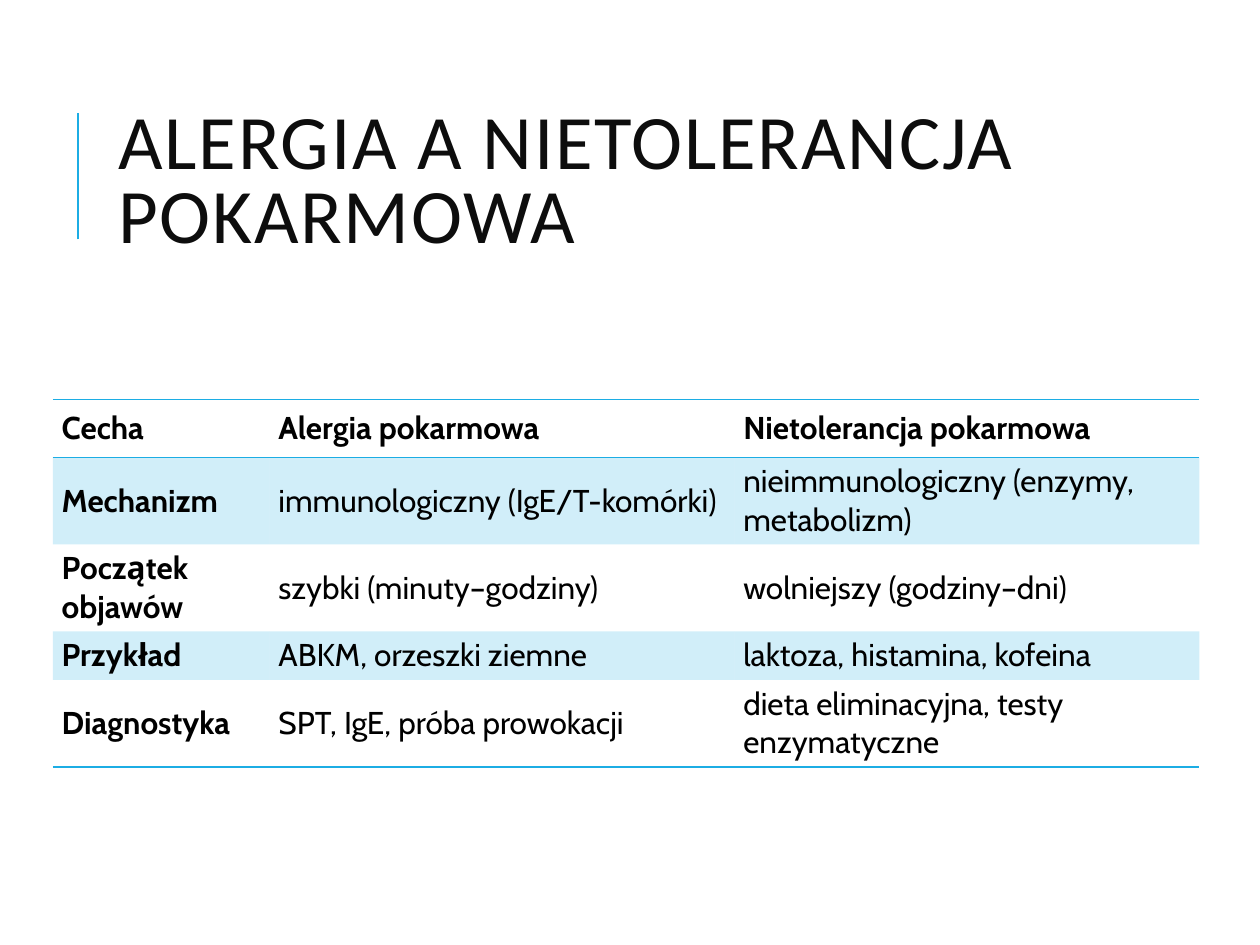
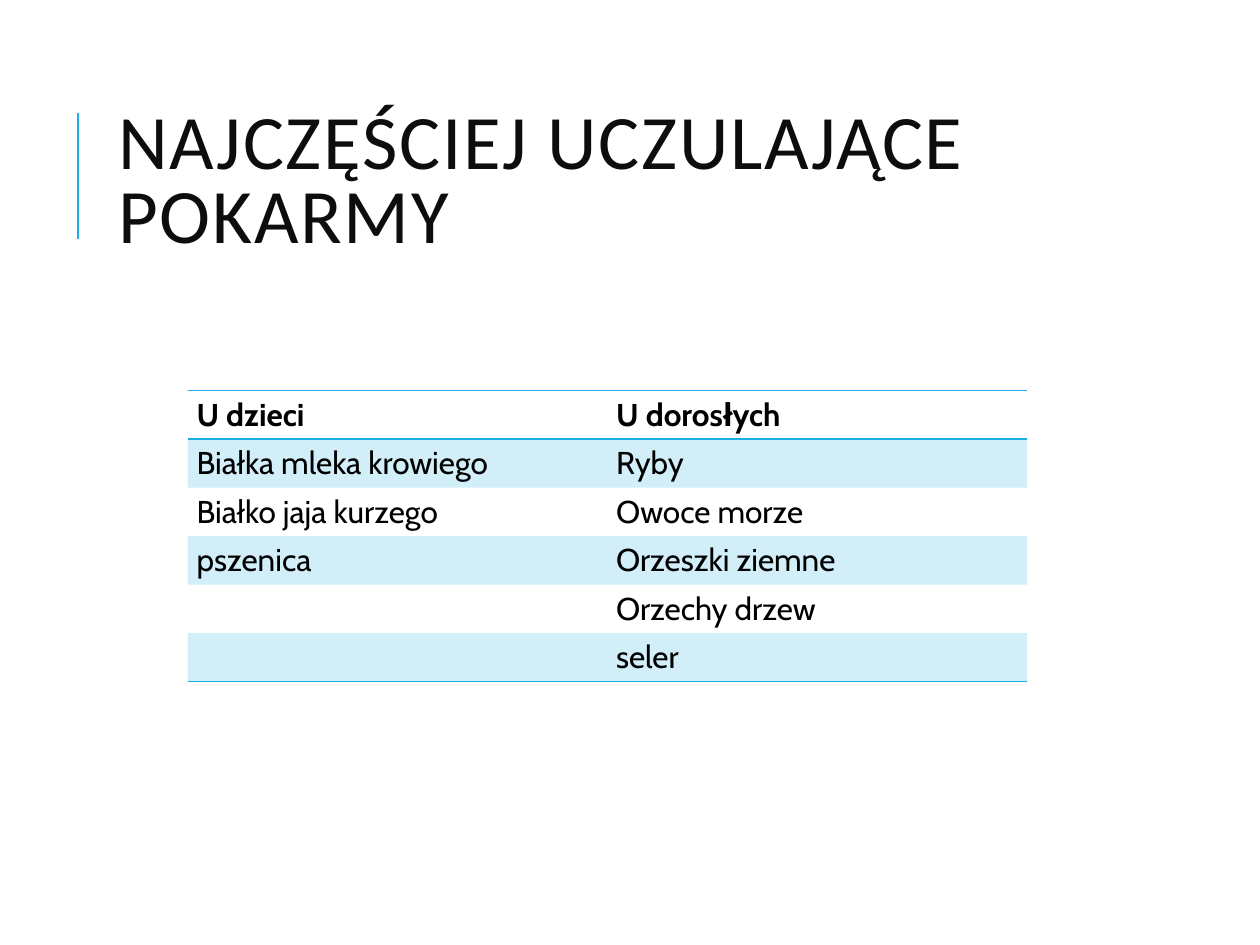
import pptx
import pptx.dml.color
import pptx.enum.shapes
import pptx.enum.text
import pptx.oxml
import pptx.oxml.ns
import pptx.util

PLAIN_TABLE_STYLE = "{2D5ABB26-0587-4C30-8999-92F81FD0307C}"
GRID_COLUMNS, GRID_ROWS = 100, 75


def colour(hex_string):
    return pptx.dml.color.RGBColor.from_string(hex_string)


def add_xml(parent, xml):
    namespace = pptx.oxml.ns.nsdecls("a")
    tag, rest = xml.split(" ", 1)
    parent.append(pptx.oxml.parse_xml(f"{tag} {namespace} {rest}"))


class Deck:
    accent = "1CADE4"
    title_colour = "0D0D0D"
    text_colour = "000000"
    title_font = "Calibri"
    table_font = "Cabin"
    band_opacity = 20

    def __init__(self):
        self.presentation = pptx.Presentation()
        self.presentation.slide_width = pptx.util.Inches(10)
        self.presentation.slide_height = pptx.util.Inches(7.5)
        self.slide = None

    def x(self, columns):
        return round(self.presentation.slide_width * columns / GRID_COLUMNS)

    def y(self, rows):
        return round(self.presentation.slide_height * rows / GRID_ROWS)

    def new_slide(self, title):
        layout = self.presentation.slide_layouts.get_by_name("Title Only")
        self.slide = self.presentation.slides.add_slide(layout)
        self.title_rule()
        self.title(title)

    def title_rule(self):
        rule = self.slide.shapes.add_connector(
            pptx.enum.shapes.MSO_CONNECTOR.STRAIGHT,
            self.x(6.2), self.y(19), self.x(6.2), self.y(9))
        rule.line.color.rgb = colour(self.accent)
        rule.line.width = pptx.util.Pt(1.5)
        add_xml(rule._element.spPr, "<a:effectLst />")

    def title(self, text):
        shape = self.slide.shapes.title
        shape.left, shape.top = self.x(8.4), self.y(6.4)
        shape.width, shape.height = self.x(79.7), self.y(16.4)
        frame = shape.text_frame
        frame.text = text
        frame.word_wrap = True
        frame.auto_size = pptx.enum.text.MSO_AUTO_SIZE.NONE
        frame.vertical_anchor = pptx.enum.text.MSO_ANCHOR.MIDDLE
        paragraph = frame.paragraphs[0]
        paragraph.alignment = pptx.enum.text.PP_ALIGN.LEFT
        paragraph.line_spacing = 0.8
        self.format_font(paragraph.font, self.title_font, 44, self.title_colour)
        paragraph.runs[0].font._element.set("spc", "100")

    def format_font(self, font, name, size, hex_string, bold=False):
        font.name = name
        font.size = pptx.util.Pt(size)
        font.bold = bold
        font.color.rgb = colour(hex_string)

    def table(self, left, top, widths, heights, rows, anchor, bold_first_column=False):
        frame = self.slide.shapes.add_table(
            len(rows), len(widths), self.x(left), self.y(top),
            self.x(sum(widths)), self.y(sum(heights)))
        table = frame.table
        properties = table._tbl.tblPr
        properties.find(pptx.oxml.ns.qn("a:tableStyleId")).text = PLAIN_TABLE_STYLE
        for column, width in zip(table.columns, widths):
            column.width = self.x(width)
        for row, height in zip(table.rows, heights):
            row.height = self.y(height)
        for i, texts in enumerate(rows):
            edges = {0: ("lnT", "lnB"), len(rows) - 1: ("lnB",)}.get(i, ())
            for j, text in enumerate(texts):
                bold = i == 0 or (bold_first_column and j == 0)
                self.cell(table.cell(i, j), text, bold, i % 2 == 1, edges, anchor)

    def cell(self, cell, text, bold, banded, edges, anchor):
        cell.text = text
        cell.vertical_anchor = anchor
        cell.margin_left = cell.margin_right = pptx.util.Inches(0.07)
        cell.margin_top = cell.margin_bottom = pptx.util.Inches(0.04)
        font = cell.text_frame.paragraphs[0].font
        self.format_font(font, self.table_font, 18, self.text_colour, bold)
        properties = cell._tc.get_or_add_tcPr()
        for edge in edges:
            add_xml(properties,
                    f'<a:{edge} w="{pptx.util.Pt(1)}"><a:solidFill>'
                    f'<a:srgbClr val="{self.accent}"/></a:solidFill></a:{edge}>')
        if banded:
            cell.fill.solid()
            cell.fill.fore_color.rgb = colour(self.accent)
            band = properties.find(".//" + pptx.oxml.ns.qn("a:solidFill")
                                   if not edges else pptx.oxml.ns.qn("a:solidFill"))
            add_xml(band[0], f'<a:alpha val="{self.band_opacity * 1000}"/>')
        else:
            cell.fill.background()


def main():
    deck = Deck()

    deck.new_slide("ALERGIA A NIETOLERANCJA POKARMOWA")
    one_line, two_lines = 3.8, 6.85
    deck.table(
        4.2, 31.7, [17.2, 36.9, 36.9],
        [4.6, two_lines, two_lines, one_line, two_lines],
        [
            ("Cecha", "Alergia pokarmowa", "Nietolerancja pokarmowa"),
            ("Mechanizm", "immunologiczny (IgE/T-komórki)",
             "nieimmunologiczny (enzymy, metabolizm)"),
            ("Początek objawów", "szybki (minuty–godziny)", "wolniejszy (godziny–dni)"),
            ("Przykład", "ABKM, orzeszki ziemne", "laktoza, histamina, kofeina"),
            ("Diagnostyka", "SPT, IgE, próba prowokacji",
             "dieta eliminacyjna, testy enzymatyczne"),
        ],
        pptx.enum.text.MSO_ANCHOR.MIDDLE, bold_first_column=True)

    deck.new_slide("NAJCZĘŚCIEJ UCZULAJĄCE POKARMY")
    allergens = [
        ("U dzieci", "U dorosłych"),
        ("Białka mleka krowiego", "Ryby"),
        ("Białko jaja kurzego", "Owoce morze"),
        ("pszenica", "Orzeszki ziemne"),
        ("", "Orzechy drzew"),
        ("", "seler"),
    ]
    deck.table(14.9, 31, [33.3] * 2, [one_line] * len(allergens), allergens,
               pptx.enum.text.MSO_ANCHOR.TOP)

    deck.presentation.save("out.pptx")


if __name__ == "__main__":
    main()
